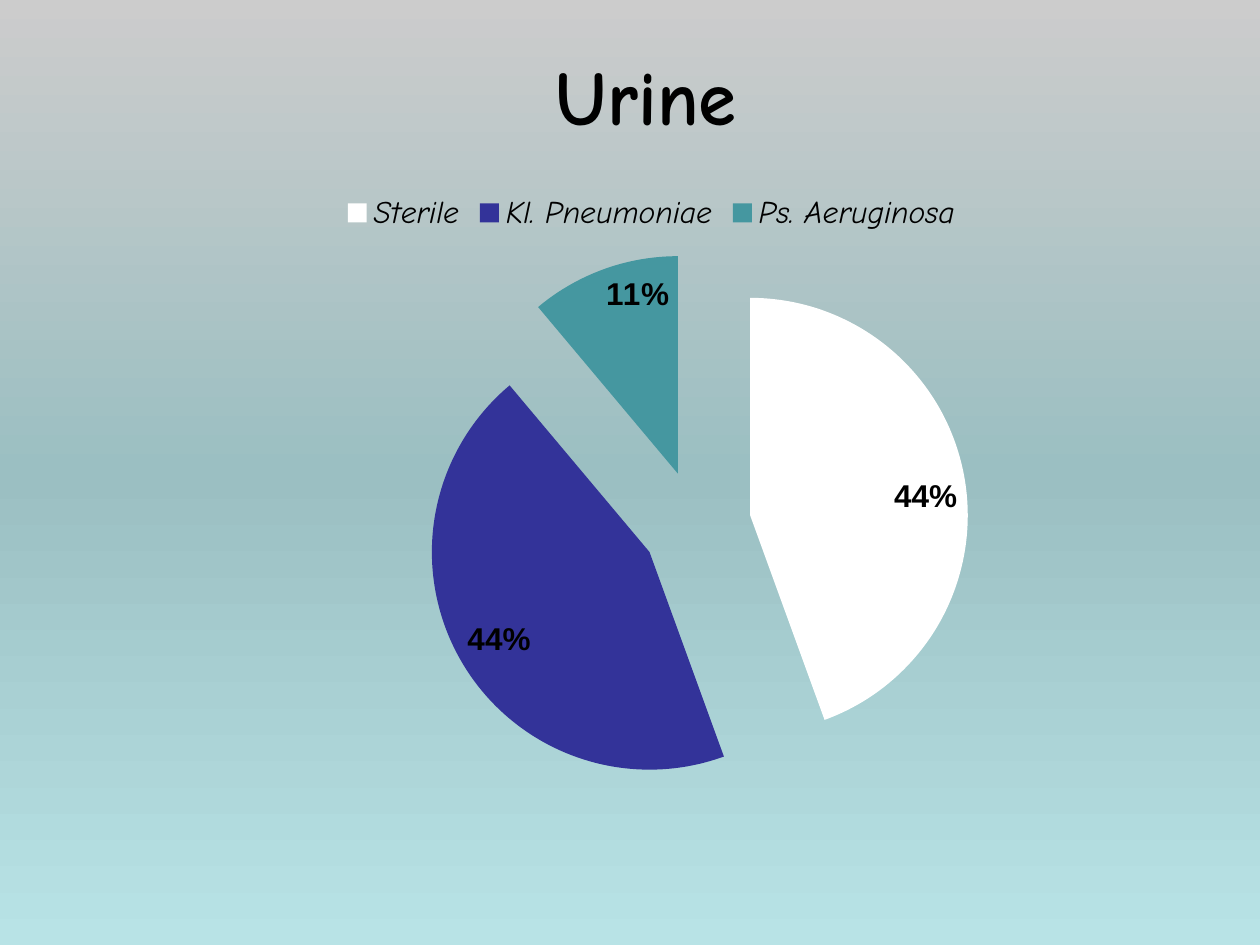
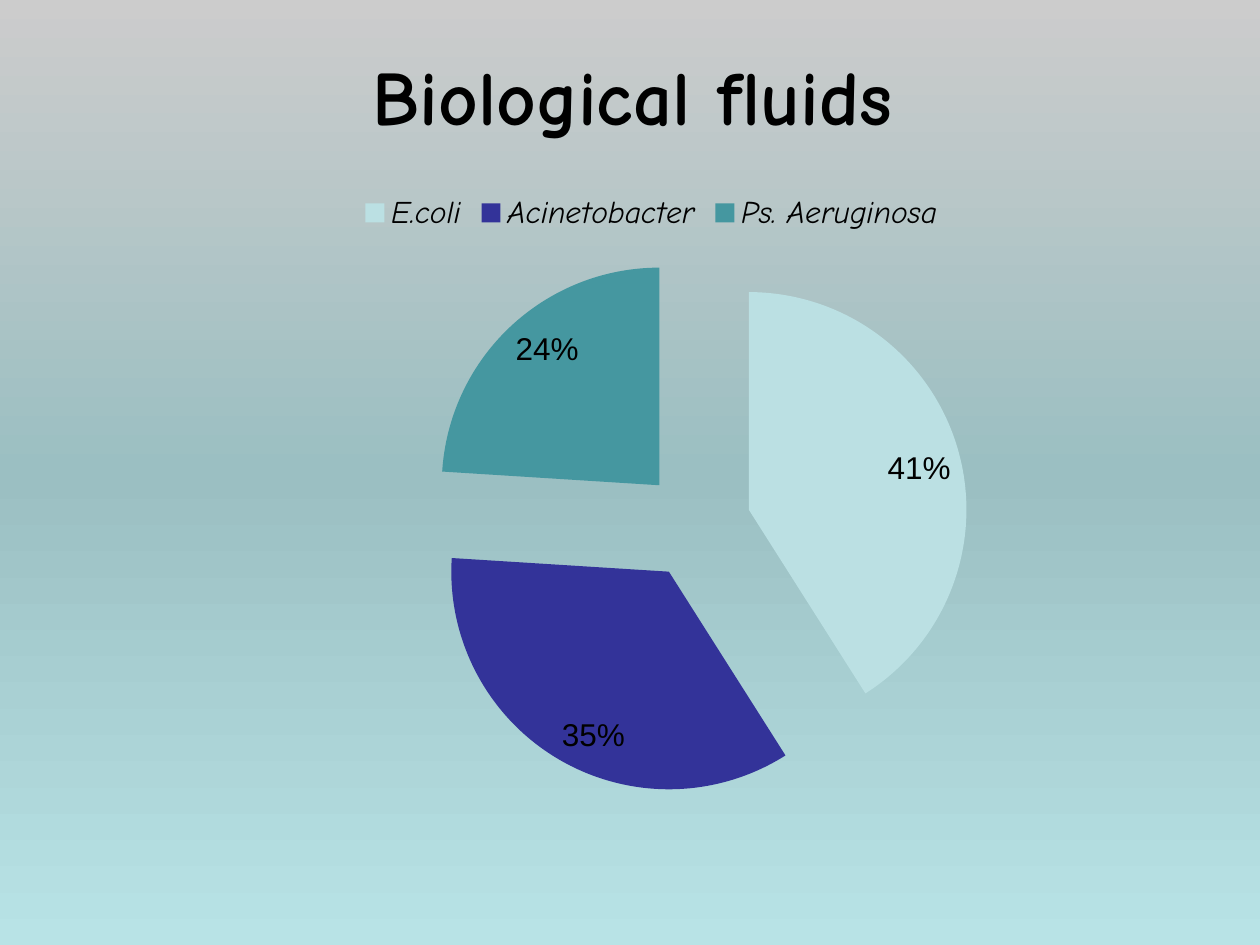
"""Build two slides of exploded pie charts of organisms found in cultures."""
from copy import deepcopy

from lxml import etree
from pptx import Presentation
from pptx import util as u
from pptx.chart.data import CategoryChartData
from pptx.dml.color import RGBColor
from pptx.enum import chart as charts, text
from pptx.oxml.ns import qn

WHITE = RGBColor(0xFF, 0xFF, 0xFF)
PALE = RGBColor(0xBB, 0xE0, 0xE3)
INDIGO = RGBColor(0x33, 0x33, 0x99)
TEAL = RGBColor(0x45, 0x97, 0xA0)
BLACK = RGBColor(0, 0, 0)
BACKDROP = [
    (0, RGBColor(0xCC, 0xCC, 0xCC)),
    (0.5, RGBColor(0x9B, 0xBF, 0xC2)),
    (1, RGBColor(0xB8, 0xE3, 0xE6)),
]
DISPLAY_FONT, BODY_FONT = "Comic Neue", "Arial"

SLIDES = [
    {
        "title": "Urine",
        "slices": [("Sterile", 44, WHITE), ("Kl. Pneumoniae", 44, INDIGO),
                   ("Ps. Aeruginosa", 11, TEAL)],
        "bold_labels": True,
    },
    {
        "title": "Biological fluids ",
        "slices": [("E.coli", 41, PALE), ("Acinetobacter", 35, INDIGO),
                   ("Ps. Aeruginosa", 24, TEAL)],
        "bold_labels": False,
    },
]

TITLE_AREA = [u.Cm(n) for n in (1.7, 0.43, 22.66, 2.97)]
CHART_AREA = [u.Cm(n) for n in (1.7, 3.61, 22.86, 13.54)]
PLOT_LAYOUT = [("layoutTarget", "inner"), ("xMode", "edge"), ("yMode", "edge"),
               ("x", 0.08), ("y", 0.11), ("w", 0.92), ("h", 0.81)]
EXPLOSION = 25


def paint_backdrop(master):
    fill = master.background.fill
    fill.gradient()
    fill.gradient_angle = 270
    stop_list = master.element.find(".//" + qn("a:gsLst"))
    stop_list.append(deepcopy(stop_list[-1]))
    for stop, (position, color) in zip(fill.gradient_stops, BACKDROP):
        stop.position = position
        stop.color.rgb = color


def style_font(font, name, size, bold=False, italic=False):
    font.name, font.size = name, u.Pt(size)
    font.bold, font.italic = bold, italic
    font.color.rgb = BLACK


def add_title(slide, title):
    frame = slide.shapes.add_textbox(*TITLE_AREA).text_frame
    frame.word_wrap = True
    frame.vertical_anchor = text.MSO_ANCHOR.MIDDLE
    para = frame.paragraphs[0]
    para.text = title
    para.alignment = text.PP_ALIGN.CENTER
    style_font(para.font, DISPLAY_FONT, 44, bold=True)


def place_plot(chart):
    plot_area = chart.element.find(".//" + qn("c:plotArea"))
    for old_layout in plot_area.findall(qn("c:layout")):
        plot_area.remove(old_layout)
    layout = etree.Element(qn("c:layout"))
    manual = etree.SubElement(layout, qn("c:manualLayout"))
    for tag, value in PLOT_LAYOUT:
        etree.SubElement(manual, qn("c:" + tag)).set("val", str(value))
    plot_area.insert(0, layout)


def explode(chart):
    explosion = etree.Element(qn("c:explosion"))
    explosion.set("val", str(EXPLOSION))
    chart.element.find(".//" + qn("c:ser")).find(qn("c:tx")).addnext(explosion)


def add_pie(slide, slices, bold_labels):
    names, values, colors = zip(*slices)
    data = CategoryChartData()
    data.categories = names
    data.add_series("Series 1", values)
    chart = slide.shapes.add_chart(charts.XL_CHART_TYPE.PIE, *CHART_AREA, data).chart
    chart.has_title = False
    style_font(chart.font, BODY_FONT, 18)
    place_plot(chart)
    explode(chart)

    chart.has_legend = True
    chart.legend.position = charts.XL_LEGEND_POSITION.TOP
    chart.legend.include_in_layout = False
    style_font(chart.legend.font, DISPLAY_FONT, 18, italic=True)

    plot = chart.plots[0]
    plot.vary_by_categories = True
    for index, color in enumerate(colors):
        fill = plot.series[0].points[index].format.fill
        fill.solid()
        fill.fore_color.rgb = color

    plot.has_data_labels = True
    labels = plot.data_labels
    labels.show_percentage, labels.show_value = True, False
    labels.number_format, labels.number_format_is_linked = "0%", False
    labels.position = charts.XL_LABEL_POSITION.INSIDE_END
    style_font(labels.font, BODY_FONT, 18, bold=bold_labels)


def main():
    deck = Presentation()
    deck.slide_width, deck.slide_height = u.Cm(25.4), u.Cm(19.05)
    paint_backdrop(deck.slide_master)
    for content in SLIDES:
        slide = deck.slides.add_slide(deck.slide_layouts[6])
        add_title(slide, content["title"])
        add_pie(slide, content["slices"], content["bold_labels"])
    deck.save("out.pptx")


if __name__ == "__main__":
    main()
